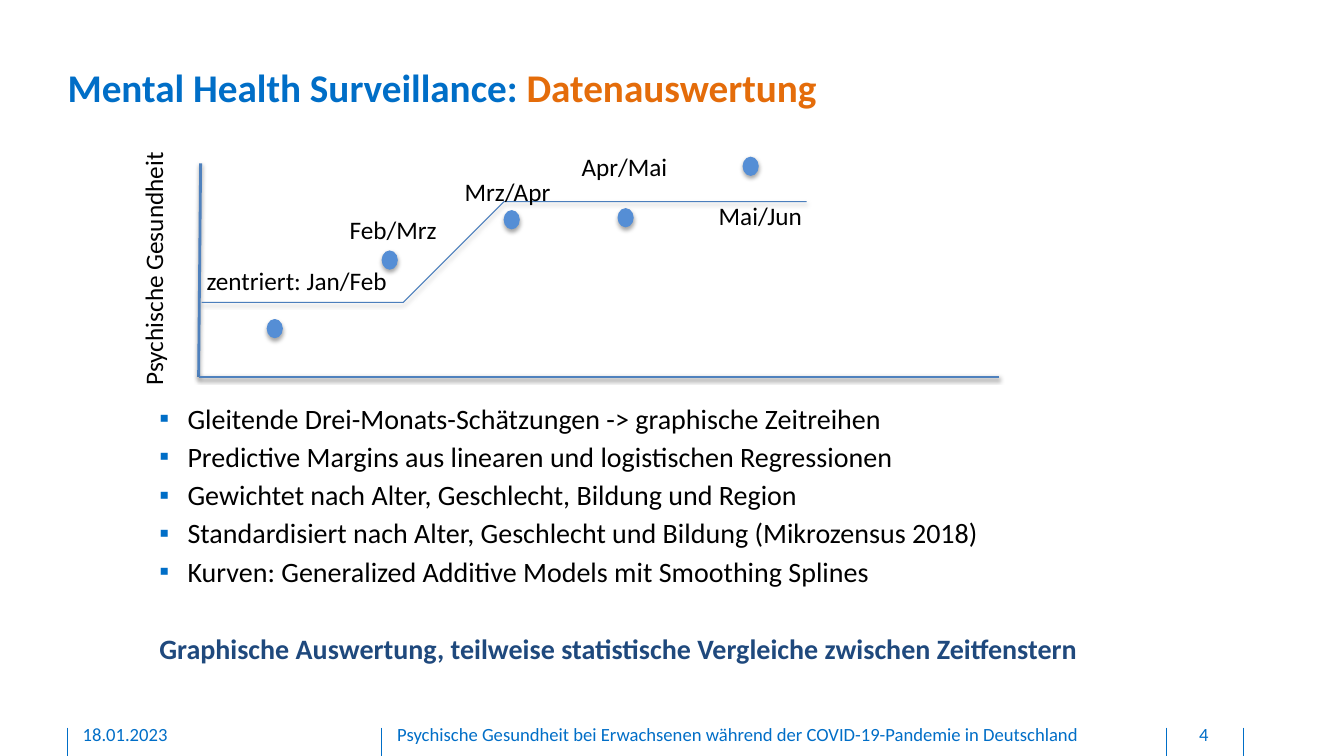
from lxml import etree
from pptx import Presentation
from pptx.dml.color import RGBColor
from pptx.enum.shapes import MSO_CONNECTOR as CONN, MSO_SHAPE as SHAPE
from pptx.enum.text import MSO_ANCHOR as ANCHOR, MSO_AUTO_SIZE as AUTO, PP_ALIGN as ALIGN
from pptx.oxml.ns import qn
from pptx.util import Inches, Pt

BLUE, ORANGE, NAVY, BLACK = "006EC7", "E46C0A", "1F497D", "000000"
AXIS, DOT, CURVE = "4F81BD", "558ED5", "4B7EBC"

BULLETS = [
    "Gleitende Drei-Monats-Schätzungen -> graphische Zeitreihen",
    "Predictive Margins aus linearen und logistischen Regressionen",
    "Gewichtet nach Alter, Geschlecht, Bildung und Region",
    "Standardisiert nach Alter, Geschlecht und Bildung (Mikrozensus 2018)",
    "Kurven: Generalized Additive Models mit Smoothing Splines",
]
CONCLUSION = "Graphische Auswertung, teilweise statistische Vergleiche zwischen Zeitfenstern"

# Label, label left, top and width, dot left and top
MONTHS = [
    ("zentriert: Jan/Feb", 1.95, 2.58, 2.01, 2.65, 3.17),
    ("Feb/Mrz", 3.37, 2.08, 1.07, 3.79, 2.49),
    ("Mrz/Apr", 4.51, 1.7, 1.06, 5, 2.09),
    ("Apr/Mai", 5.67, 1.45, 1.06, 6.13, 2.07),
    ("Mai/Jun", 7.03, 1.94, 1.04, 7.37, 1.56),
]
TREND = [
    (1.99, 3.05), (2.07, 3.06), (2.14, 3.08), (2.21, 3.1), (2.77, 3.09), (2.83, 3.08),
    (2.9, 3.06), (3.09, 3.03), (3.18, 3), (3.26, 2.98), (3.34, 2.95), (3.41, 2.91),
    (3.5, 2.88), (3.58, 2.88), (3.64, 2.85), (3.67, 2.83), (3.84, 2.81), (3.92, 2.78),
    (3.97, 2.74), (4.05, 2.7), (4.08, 2.68), (4.17, 2.65), (4.23, 2.62), (4.29, 2.6),
    (4.4, 2.56), (4.48, 2.51), (4.53, 2.5), (4.59, 2.47), (4.67, 2.42), (4.74, 2.41),
    (4.82, 2.37), (4.9, 2.35), (4.92, 2.32), (4.96, 2.29), (5.02, 2.27), (5.08, 2.24),
    (5.15, 2.18), (5.28, 2.14), (5.32, 2.11), (5.4, 2.08), (5.49, 2.07), (5.52, 2.05),
    (5.6, 2.03), (5.67, 1.99), (5.73, 1.98), (5.79, 1.97), (5.84, 1.95), (5.9, 1.94),
    (6.08, 1.92), (6.18, 1.9), (6.36, 1.89), (6.54, 1.88), (6.68, 1.87), (6.8, 1.84),
    (7.4, 1.85), (7.54, 1.87), (7.61, 1.88), (7.77, 1.88),
]


def rgb(color):
    return RGBColor.from_string(color)


def set_shadow(shape, dist, alpha):
    """Give the shape a soft black shadow below it, or none if alpha is 0."""
    effects = etree.SubElement(shape.element.spPr, qn("a:effectLst"))
    if alpha:
        outer = etree.SubElement(effects, qn("a:outerShdw"), blurRad=str(Pt(3.1)),
                                 dist=str(Pt(dist)), dir="5400000", rotWithShape="0")
        black = etree.SubElement(outer, qn("a:srgbClr"), val=BLACK)
        etree.SubElement(black, qn("a:alpha"), val=str(alpha * 1000))


def set_bullet(p, shown):
    """Give the paragraph a hanging square bullet, or neither bullet nor indent."""
    pPr = p._p.get_or_add_pPr()
    indent = Inches(0.28) if shown else 0
    pPr.set("marL", str(indent))
    pPr.set("indent", str(-indent))
    if shown:
        color = etree.SubElement(pPr, qn("a:buClr"))
        etree.SubElement(color, qn("a:srgbClr"), val=BLUE)
        etree.SubElement(pPr, qn("a:buFont"), typeface="Arial")
        etree.SubElement(pPr, qn("a:buChar"), char="▪")
    else:
        etree.SubElement(pPr, qn("a:buNone"))


class SlideBuilder:
    font = "Calibri"

    def __init__(self, s):
        self.s = s

    def run(self, p, text, size, color, bold=False):
        r = p.add_run()
        r.text = text
        r.font.name, r.font.size, r.font.bold = self.font, Pt(size), bold
        r.font.color.rgb = rgb(color)

    def place(self, sp, left, top, width, height):
        sp.left, sp.top = Inches(left), Inches(top)
        sp.width, sp.height = Inches(width), Inches(height)
        sp.text_frame.auto_size = AUTO.NONE
        sp.text_frame.vertical_anchor = ANCHOR.TOP

    def title(self, *parts):
        sp = self.s.shapes.title
        self.place(sp, 0.67, 0.7, 11.64, 0.41)
        tf = sp.text_frame
        tf.margin_left = tf.margin_right = tf.margin_top = tf.margin_bottom = 0
        p = tf.paragraphs[0]
        p.alignment, p.line_spacing = ALIGN.LEFT, Pt(28.7)
        for text, color in parts:
            self.run(p, text, 28, color, True)

    def body(self, bullets, conclusion):
        sp = self.s.placeholders[1]
        self.place(sp, 1.48, 3.93, 11.45, 2.71)
        tf = sp.text_frame
        for i, text in enumerate(bullets):
            p = tf.paragraphs[0] if i == 0 else tf.add_paragraph()
            p.space_before = Pt(3.3 if i else 0)
            set_bullet(p, True)
            self.run(p, text, 20, BLACK)
        p = tf.add_paragraph()
        p.space_before = Pt(31)
        set_bullet(p, False)
        self.run(p, conclusion, 20, NAVY, True)

    def label(self, text, left, top, width, rotation=0):
        sp = self.s.shapes.add_textbox(Inches(left), Inches(top), Inches(width), Inches(0.4))
        sp.rotation = rotation
        sp.text_frame.word_wrap = False
        self.run(sp.text_frame.paragraphs[0], text, 18, BLACK)

    def footer(self, text, left, width, align=ALIGN.LEFT):
        sp = self.s.shapes.add_textbox(Inches(left), Inches(7.17), Inches(width), Inches(0.33))
        tf = sp.text_frame
        tf.word_wrap = True
        tf.margin_left = tf.margin_right = tf.margin_top = 0
        p = tf.paragraphs[0]
        p.alignment = align
        self.run(p, text, 13.3, BLUE)

    def line(self, x1, y1, x2, y2, color, weight, shadow=0):
        cx = self.s.shapes.add_connector(CONN.STRAIGHT, Inches(x1), Inches(y1),
                                         Inches(x2), Inches(y2))
        cx.line.color.rgb, cx.line.width = rgb(color), Pt(weight)
        set_shadow(cx, 1.6, shadow)

    def dot(self, left, top):
        sp = self.s.shapes.add_shape(SHAPE.OVAL, Inches(left), Inches(top),
                                     Inches(0.15), Inches(0.18))
        sp.fill.solid()
        sp.fill.fore_color.rgb = sp.line.color.rgb = rgb(DOT)
        sp.line.width = Pt(0.75)
        set_shadow(sp, 1.8, 35)

    def curve(self, points):
        builder = self.s.shapes.build_freeform(*points[0], scale=Inches(1))
        builder.add_line_segments(points[1:], close=False)
        sp = builder.convert_to_shape()
        sp.fill.background()
        sp.line.color.rgb, sp.line.width = rgb(CURVE), Pt(0.75)
        set_shadow(sp, 1.8, 35)


def main():
    prs = Presentation()
    prs.slide_width, prs.slide_height = Inches(13.33), Inches(7.5)
    b = SlideBuilder(prs.slides.add_slide(prs.slide_layouts[1]))

    b.title(("Mental Health Surveillance: ", BLUE), ("Datenauswertung", ORANGE))
    b.body(BULLETS, CONCLUSION)

    b.line(1.99, 1.62, 1.97, 3.74, AXIS, 2, shadow=38)
    b.line(1.97, 3.74, 9.91, 3.74, AXIS, 2, shadow=38)
    b.label("Psychische Gesundheit", 0.25, 2.45, 2.54, rotation=270)
    b.curve(TREND)
    for text, left, top, width, dot_left, dot_top in MONTHS:
        b.dot(dot_left, dot_top)
        b.label(text, left, top, width)

    for x in (0.67, 3.78, 11.57, 12.33):
        b.line(x, 7.22, x, 7.5, BLUE, 0.5)
    b.footer("18.01.2023", 0.82, 2.71)
    b.footer("Psychische Gesundheit bei Erwachsenen während der COVID-19-Pandemie in Deutschland",
             3.94, 7.46)
    b.footer("4", 11.58, 0.72, ALIGN.CENTER)
    prs.save("out.pptx")


if __name__ == "__main__":
    main()
